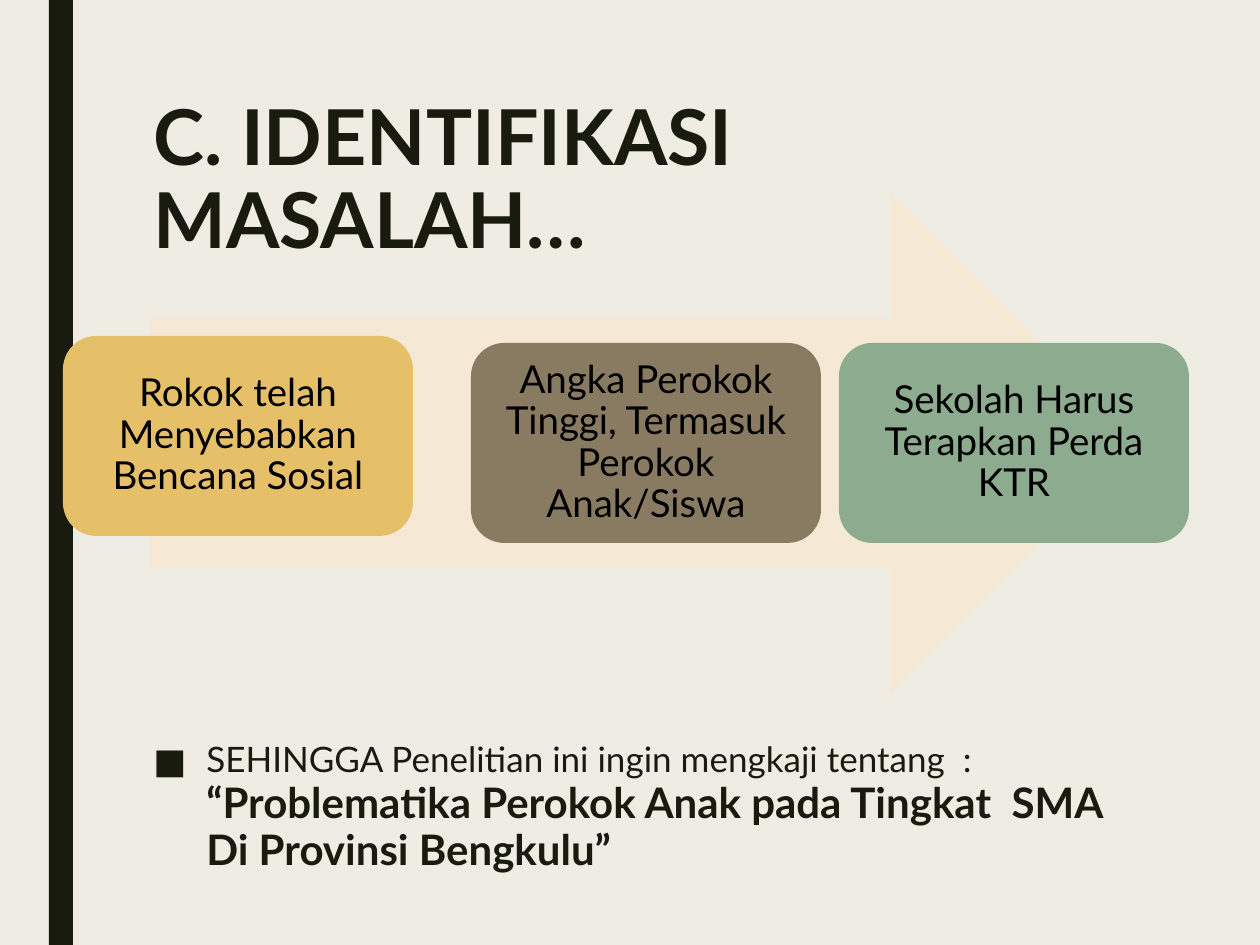
from lxml import etree
from pptx import Presentation, util as u
from pptx.dml.color import RGBColor
from pptx.enum import shapes, text
from pptx.oxml.ns import qn

INK = RGBColor(0x19, 0x1B, 0x0E)
BLACK = RGBColor(0, 0, 0)
PAPER = RGBColor(0xEF, 0xED, 0xE3)
CREAM = RGBColor(0xF5, 0xE8, 0xD4)
GOLD = RGBColor(0xE6, 0xC0, 0x69)
BROWN = RGBColor(0x89, 0x7B, 0x61)
GREEN = RGBColor(0x8D, 0xAB, 0x8E)
KIND = shapes.MSO_SHAPE


def px(n):
    return u.Emu(round(n * 914400 / 126))


def write(shape, runs, color=INK, align=text.PP_ALIGN.LEFT,
          anchor=text.MSO_ANCHOR.TOP, line=0.9, inset=None):
    """Fill the shape with one paragraph; runs are (words, size, bold)."""
    frame = shape.text_frame
    frame.word_wrap = True
    frame.vertical_anchor = anchor
    if inset is not None:
        frame.margin_left = frame.margin_right = px(inset)
        frame.margin_top = frame.margin_bottom = px(inset)
    para = frame.paragraphs[0]
    para.alignment = align
    para.line_spacing = line
    for words, size, bold in runs:
        run = para.add_run()
        run.text = words
        run.font.name = "Lato"
        run.font.size = u.Pt(size)
        run.font.bold = bold
        run.font.color.rgb = color
    return para


deck = Presentation()
deck.slide_width, deck.slide_height = px(1260), px(945)
slide = deck.slides.add_slide(deck.slide_layouts[6])
slide.background.fill.solid()
slide.background.fill.fore_color.rgb = PAPER

# Side bar, arrow and the three steps, from back to front
steps = []
for kind, x, y, w, h, color in [
    (KIND.RECTANGLE, 49, 0, 24, 945, INK),
    (KIND.RIGHT_ARROW, 150, 193, 990, 500, CREAM),
    (KIND.ROUNDED_RECTANGLE, 63, 336, 350, 200, GOLD),
    (KIND.ROUNDED_RECTANGLE, 471, 343, 350, 200, BROWN),
    (KIND.ROUNDED_RECTANGLE, 839, 343, 350, 200, GREEN),
]:
    shape = slide.shapes.add_shape(kind, px(x), px(y), px(w), px(h))
    shape.shadow.inherit = False
    shape.fill.solid()
    shape.fill.fore_color.rgb = color
    shape.line.fill.background()
    if kind == KIND.ROUNDED_RECTANGLE:
        steps.append(shape)

labels = [
    "Rokok telah Menyebabkan Bencana Sosial",
    "Angka Perokok Tinggi, Termasuk Perokok Anak/Siswa",
    "Sekolah Harus Terapkan Perda KTR",
]
for step, label in zip(steps, labels):
    write(step, [(label, 22, False)], color=BLACK, inset=11,
          align=text.PP_ALIGN.CENTER, anchor=text.MSO_ANCHOR.MIDDLE)

title = slide.shapes.add_textbox(px(141), px(94), px(993), px(204))
write(title, [("C. IDENTIFIKASI MASALAH…", 44, True)], line=0.89)

body = slide.shapes.add_textbox(px(141), px(735), px(993), px(157))
para = write(body, [
    ("SEHINGGA Penelitian ini ingin mengkaji tentang  : ", 20, False),
    ("“Problematika Perokok Anak pada Tingkat  SMA Di Provinsi Bengkulu”",
     24, True),
], line=0.94)
para.space_before, para.space_after = u.Pt(10), u.Pt(2)
props = para._p.get_or_add_pPr()
props.set("marL", str(px(53)))
props.set("indent", str(-px(53)))
etree.SubElement(props, qn("a:buFont"), typeface="Lato")
etree.SubElement(props, qn("a:buChar"), char="■")

deck.save("out.pptx")
